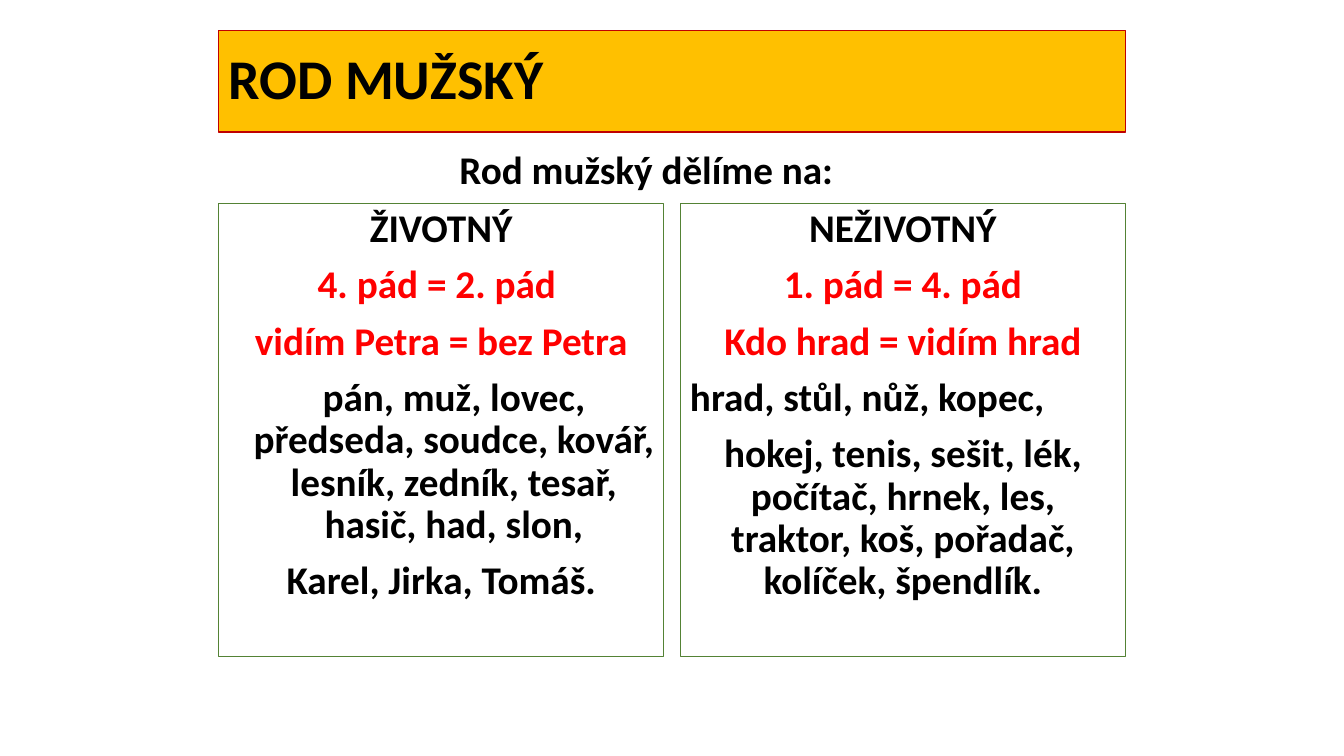
from dataclasses import dataclass

from pptx import Presentation
from pptx.dml.color import RGBColor
from pptx.enum.shapes import MSO_SHAPE
from pptx.enum.text import MSO_ANCHOR, MSO_AUTO_SIZE, PP_ALIGN
from pptx.util import Pt


@dataclass(frozen=True)
class Theme:
    font: str = "Calibri"
    title_size: float = 40
    body_size: float = 28
    text: RGBColor = RGBColor(0x00, 0x00, 0x00)
    rule: RGBColor = RGBColor(0xFF, 0x00, 0x00)
    title_fill: RGBColor = RGBColor(0xFF, 0xC0, 0x00)
    title_line: RGBColor = RGBColor(0xC0, 0x00, 0x00)
    column_line: RGBColor = RGBColor(0x54, 0x82, 0x35)
    line_width: float = 0.75


@dataclass(frozen=True)
class Line:
    text: str
    color: RGBColor
    align: PP_ALIGN = PP_ALIGN.CENTER
    indent: float = 0


@dataclass(frozen=True)
class Column:
    left: float
    lines: tuple[Line, ...]


THEME = Theme()
LEFT, WIDTH = 156, 648
COLUMN_TOP, COLUMN_WIDTH, COLUMN_HEIGHT = 145.44, 318.24, 323.28

COLUMNS = (
    Column(LEFT, (
        Line("ŽIVOTNÝ", THEME.text),
        Line("4. pád = 2. pád ", THEME.rule),
        Line("vidím Petra = bez Petra", THEME.rule),
        Line("pán, muž, lovec, předseda, soudce, kovář, lesník, zedník, "
             "tesař, hasič, had, slon,", THEME.text, indent=18),
        Line("Karel, Jirka, Tomáš.", THEME.text),
    )),
    Column(LEFT + WIDTH - COLUMN_WIDTH, (
        Line("NEŽIVOTNÝ", THEME.text),
        Line("1. pád = 4. pád", THEME.rule),
        Line("Kdo hrad = vidím hrad", THEME.rule),
        Line("hrad, stůl, nůž, kopec,", THEME.text, PP_ALIGN.LEFT),
        Line("hokej, tenis, sešit, lék, počítač, hrnek, les, traktor, "
             "koš, pořadač, kolíček, špendlík.", THEME.text),
    )),
)


def write(p, line: Line, size: float) -> None:
    p.text = line.text
    p.alignment = line.align
    if line.indent:
        p._p.get_or_add_pPr().set("marL", str(Pt(line.indent)))
    font = p.runs[0].font
    font.name, font.size, font.bold = THEME.font, Pt(size), True
    font.color.rgb = line.color


def outline(sp, color: RGBColor) -> None:
    sp.line.color.rgb = color
    sp.line.width = Pt(THEME.line_width)


def add_title(s, text: str) -> None:
    sp = s.shapes.title
    sp.left, sp.top, sp.width, sp.height = Pt(LEFT), Pt(21.6), Pt(WIDTH), Pt(72.72)
    sp.fill.solid()
    sp.fill.fore_color.rgb = THEME.title_fill
    outline(sp, THEME.title_line)
    tf = sp.text_frame
    tf.auto_size = MSO_AUTO_SIZE.NONE
    tf.vertical_anchor = MSO_ANCHOR.MIDDLE
    p = tf.paragraphs[0]
    write(p, Line(text, THEME.text, PP_ALIGN.LEFT), THEME.title_size)
    p.line_spacing = 0.9


def add_intro(s, text: str) -> None:
    sp = s.shapes.add_textbox(Pt(321.12), Pt(100.08), Pt(398.16), Pt(41.04))
    tf = sp.text_frame
    tf.word_wrap = True
    write(tf.paragraphs[0], Line(text, THEME.text, PP_ALIGN.LEFT), THEME.body_size)


def add_column(s, column: Column) -> None:
    sp = s.shapes.add_shape(MSO_SHAPE.RECTANGLE, Pt(column.left), Pt(COLUMN_TOP),
                            Pt(COLUMN_WIDTH), Pt(COLUMN_HEIGHT))
    sp.shadow.inherit = False
    sp.fill.background()
    outline(sp, THEME.column_line)
    tf = sp.text_frame
    tf.word_wrap = True
    tf.vertical_anchor = MSO_ANCHOR.TOP
    for i, line in enumerate(column.lines):
        p = tf.add_paragraph() if i else tf.paragraphs[0]
        write(p, line, THEME.body_size)
        p.line_spacing = 0.9
        p.space_before = Pt(10)


def main() -> None:
    prs = Presentation()
    prs.slide_width, prs.slide_height = Pt(960), Pt(540)
    s = prs.slides.add_slide(prs.slide_layouts[5])

    # Heading bar and introduction
    add_title(s, "ROD MUŽSKÝ")
    add_intro(s, "Rod mužský dělíme na:")

    # Animate and inanimate nouns
    for column in COLUMNS:
        add_column(s, column)

    prs.save("out.pptx")


if __name__ == "__main__":
    main()
